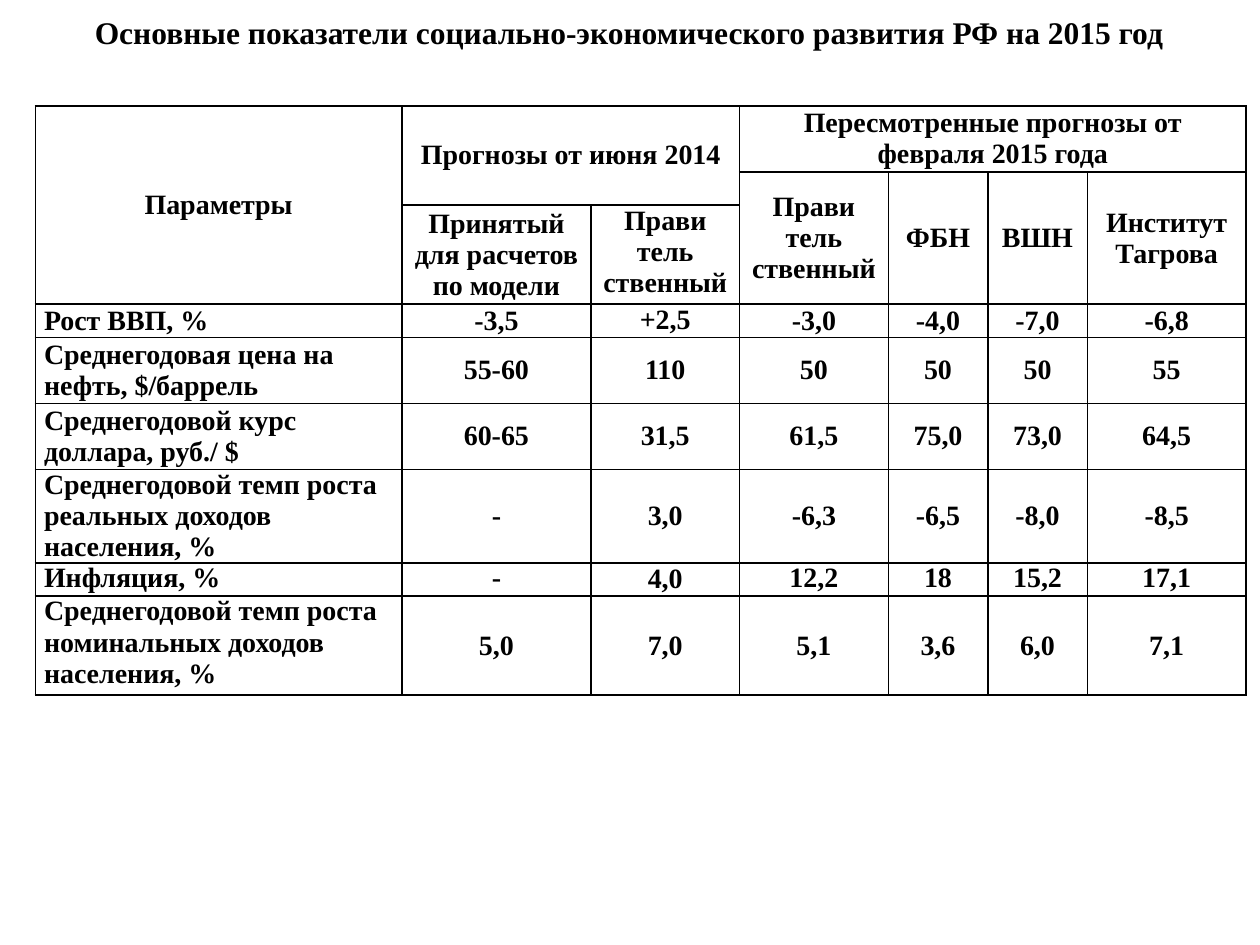
from dataclasses import dataclass

from lxml.etree import SubElement
from pptx import Presentation
from pptx.dml.color import RGBColor
from pptx.enum.text import MSO_ANCHOR as Anchor, MSO_AUTO_SIZE as AutoSize, PP_ALIGN as Align
from pptx.oxml.ns import qn
from pptx.util import Inches, Pt

COLORS = {"ink": "000000"}
FONT = "Times New Roman"
SLIDE_WIDTH, SLIDE_HEIGHT = Inches(10), Inches(7.5)
COLUMN_SHARES = (0.291, 0.15, 0.118, 0.118, 0.079, 0.079, 0.126)
LINE_SHARE = 0.035
ROW_LINES = (2, 1, 3, 1, 2, 2, 2.8, 1, 3)
FIRST_INDICATOR_ROW = 3


@dataclass(frozen=True)
class Heading:
    text: str
    row: int
    column: int
    rows: int = 1
    columns: int = 1
    anchor: Anchor = Anchor.MIDDLE


@dataclass(frozen=True)
class Indicator:
    name: str
    values: tuple[str, ...]
    align: Align = Align.LEFT
    top_columns: tuple[int, ...] = ()


HEADINGS = (
    Heading("Параметры", 0, 0, rows=3),
    Heading("Прогнозы от июня 2014", 0, 1, rows=2, columns=2),
    Heading("Пересмотренные прогнозы от февраля 2015 года", 0, 3, columns=4),
    Heading("Принятый для расчетов по модели", 2, 1),
    Heading("Прави тель ственный", 2, 2, anchor=Anchor.TOP),
    Heading("Прави тель ственный", 1, 3, rows=2),
    Heading("ФБН", 1, 4, rows=2),
    Heading("ВШН", 1, 5, rows=2),
    Heading("Институт Тагрова", 1, 6, rows=2),
)
INDICATORS = (
    Indicator("Рост ВВП, %", ("-3,5", "+2,5", "-3,0", "-4,0", "-7,0", "-6,8"), top_columns=(2,)),
    Indicator("Среднегодовая цена на нефть, $/баррель", ("55-60", "110", "50", "50", "50", "55")),
    Indicator("Среднегодовой курс доллара, руб./ $", ("60-65", "31,5", "61,5", "75,0", "73,0", "64,5")),
    Indicator("Среднегодовой темп роста реальных доходов населения, %",
              ("-", "3,0", "-6,3", "-6,5", "-8,0", "-8,5")),
    Indicator("Инфляция, %", ("-", "4,0", "12,2", "18", "15,2", "17,1"),
              Align.JUSTIFY, (0, 1, 3, 4, 5, 6)),
    Indicator("Среднегодовой темп роста номинальных доходов населения, %",
              ("5,0", "7,0", "5,1", "3,6", "6,0", "7,1"), top_columns=(0,)),
)


def write(paragraph, text: str, size: int, align: Align) -> None:
    """Put bold text in a paragraph."""
    paragraph.text = text
    paragraph.alignment = align
    font = paragraph.font
    font.name, font.size, font.bold = FONT, Pt(size), True
    font.color.rgb = RGBColor.from_string(COLORS["ink"])


def prepare_cell(cell) -> None:
    """Clear the fill, set the margins and outline a cell."""
    cell.margin_left = cell.margin_right = Inches(0.07)
    cell.margin_top = cell.margin_bottom = 0
    write(cell.text_frame.paragraphs[0], "", 16, Align.CENTER)
    properties = cell._tc.get_or_add_tcPr()
    for side in ("a:lnL", "a:lnR", "a:lnT", "a:lnB"):
        line = SubElement(properties, qn(side), w=str(Pt(1)))
        fill = SubElement(line, qn("a:solidFill"))
        SubElement(fill, qn("a:srgbClr"), val=COLORS["ink"])
    cell.fill.background()


def fill_cell(cell, text: str, align: Align = Align.CENTER, anchor: Anchor = Anchor.MIDDLE) -> None:
    """Write text into a prepared cell."""
    write(cell.text_frame.paragraphs[0], text, 16, align)
    cell.vertical_anchor = anchor


def draw_title(slide, text: str) -> None:
    """Draw the slide title."""
    box = slide.shapes.add_textbox(int(SLIDE_WIDTH * 0.061), Inches(0.05),
                                   int(SLIDE_WIDTH * 0.877), Inches(0.4))
    frame = box.text_frame
    frame.word_wrap = False
    frame.auto_size = AutoSize.SHAPE_TO_FIT_TEXT
    frame.vertical_anchor = Anchor.MIDDLE
    write(frame.paragraphs[0], text, 18, Align.CENTER)


def draw_forecasts(slide) -> None:
    """Draw the table of forecasts."""
    widths = [int(SLIDE_WIDTH * share) for share in COLUMN_SHARES]
    heights = [int(SLIDE_HEIGHT * LINE_SHARE * lines) for lines in ROW_LINES]
    table = slide.shapes.add_table(len(heights), len(widths), Inches(0.28), Inches(0.84),
                                   sum(widths), sum(heights)).table
    table.first_row = table.horz_banding = False
    for column, width in zip(table.columns, widths):
        column.width = width
    for row, height in zip(table.rows, heights):
        row.height = height
    for cell in table.iter_cells():
        prepare_cell(cell)
    for heading in HEADINGS:
        cell = table.cell(heading.row, heading.column)
        if heading.rows * heading.columns > 1:
            cell.merge(table.cell(heading.row + heading.rows - 1,
                                  heading.column + heading.columns - 1))
        fill_cell(cell, heading.text, anchor=heading.anchor)
    for row, indicator in enumerate(INDICATORS, FIRST_INDICATOR_ROW):
        for column, text in enumerate((indicator.name, *indicator.values)):
            fill_cell(table.cell(row, column), text,
                      Align.CENTER if column else indicator.align,
                      Anchor.TOP if column in indicator.top_columns else Anchor.MIDDLE)


def main() -> None:
    """Build and save the presentation."""
    presentation = Presentation()
    presentation.slide_width, presentation.slide_height = SLIDE_WIDTH, SLIDE_HEIGHT
    slide = presentation.slides.add_slide(presentation.slide_layouts[6])
    draw_forecasts(slide)
    draw_title(slide, "Основные показатели социально-экономического развития РФ на 2015 год")
    presentation.save("out.pptx")


if __name__ == "__main__":
    main()
